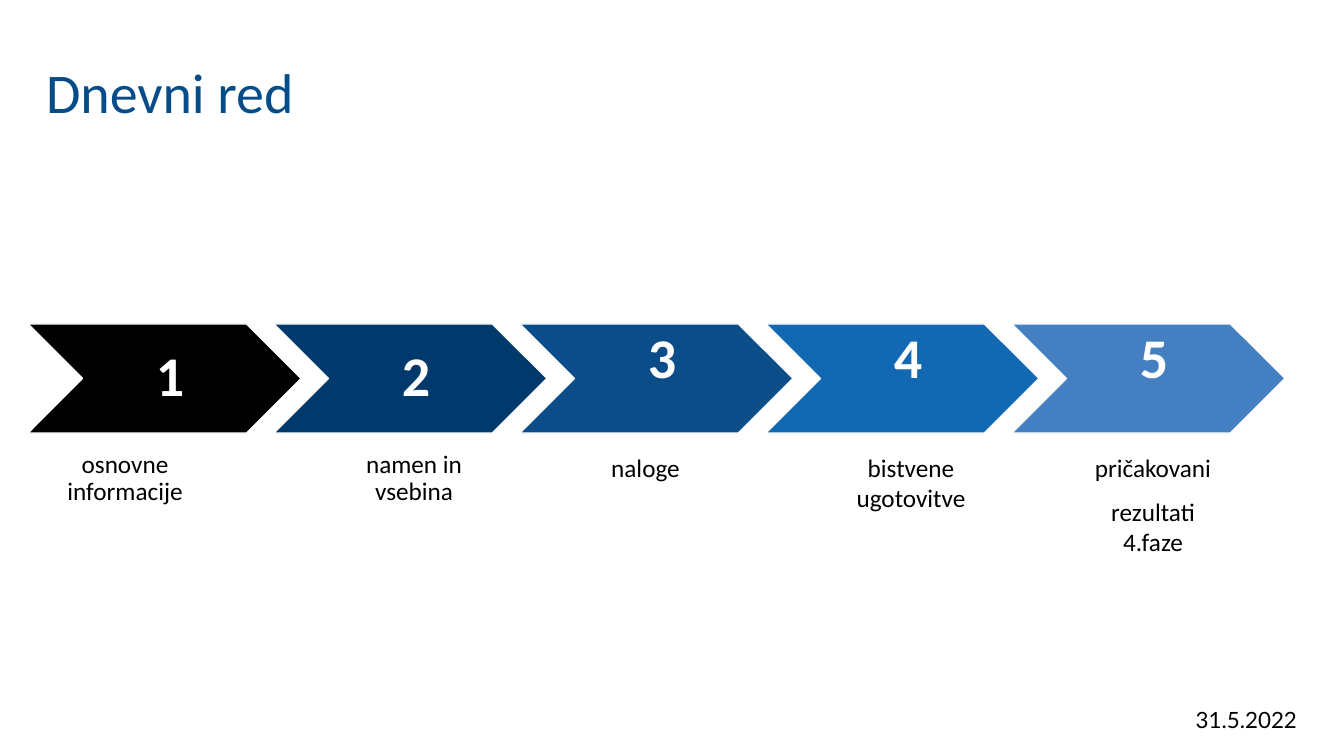
from pptx import Presentation, util as u
from pptx.dml.color import RGBColor
from pptx.enum import shapes, text

PX = 914400 / 100.8  # EMU in one px

BLACK = RGBColor(0x00, 0x00, 0x00)
WHITE = RGBColor(0xFF, 0xFF, 0xFF)
TITLE_BLUE = RGBColor(0x06, 0x4C, 0x88)
NAVY = RGBColor(0x00, 0x3A, 0x6C)
DARK_BLUE = RGBColor(0x0B, 0x4D, 0x88)
BLUE = RGBColor(0x12, 0x68, 0xB3)
LIGHT_BLUE = RGBColor(0x44, 0x7F, 0xC1)

TOP, MIDDLE = text.MSO_ANCHOR.TOP, text.MSO_ANCHOR.MIDDLE
LEFT, CENTER, RIGHT = text.PP_ALIGN.LEFT, text.PP_ALIGN.CENTER, text.PP_ALIGN.RIGHT

CHEVRON_LEFT, CHEVRON_TOP, CHEVRON_PITCH = 28, 324, 246
CHEVRON_WIDTH, CHEVRON_HEIGHT = 273, 109
LABEL_TOP, LABEL_HEIGHT = 447, 249

# Colour, number anchor, label paragraphs, label left, label width, line spacing
STEPS = [
    (BLACK, MIDDLE, ["osnovne informacije"], 48, 154, 0.9),
    (NAVY, MIDDLE, ["namen in vsebina"], 337, 154, 0.9),
    (DARK_BLUE, TOP, ["naloge"], 556, 179, 1.0),
    (BLUE, TOP, ["bistvene ugotovitve"], 834, 154, 1.0),
    (LIGHT_BLUE, TOP, ["pričakovani", "rezultati 4.faze"], 1076, 154, 1.0),
]


def px(value):
    return u.Emu(round(value * PX))


def write(shape, paragraphs, size, color, font="Calibri", bold=False, align=CENTER,
          anchor=TOP, line_spacing=1.0, gap=0):
    """Fill a shape with formatted paragraphs; gap is the space between them."""
    frame = shape.text_frame
    frame.word_wrap = True
    frame.auto_size = text.MSO_AUTO_SIZE.NONE
    frame.vertical_anchor = anchor
    for index, content in enumerate(paragraphs):
        paragraph = frame.add_paragraph() if index else frame.paragraphs[0]
        paragraph.text = content
        paragraph.alignment = align
        paragraph.line_spacing = line_spacing
        paragraph.space_before = u.Pt(gap if index else 0)
        paragraph.font.name = font
        paragraph.font.size = u.Pt(size)
        paragraph.font.bold = bold
        paragraph.font.color.rgb = color


def add_title(slide, content):
    title = slide.shapes.title
    title.left, title.top, title.width, title.height = map(px, (36, 60, 1032, 138))
    write(title, [content], 40, TITLE_BLUE, align=LEFT, line_spacing=0.9)


def add_text(slide, box, paragraphs, size, **style):
    shape = slide.shapes.add_textbox(*map(px, box))
    write(shape, paragraphs, size, BLACK, **style)


def add_chevron(slide, index, color, anchor):
    left = CHEVRON_LEFT + index * CHEVRON_PITCH
    box = (left, CHEVRON_TOP, CHEVRON_WIDTH, CHEVRON_HEIGHT)
    chevron = slide.shapes.add_shape(shapes.MSO_SHAPE.CHEVRON, *map(px, box))
    chevron.shadow.inherit = False
    chevron.fill.solid()
    chevron.fill.fore_color.rgb = color
    chevron.line.color.rgb = WHITE
    chevron.line.width = u.Pt(1)
    frame = chevron.text_frame
    frame.margin_left = px(17)
    frame.margin_right = frame.margin_top = frame.margin_bottom = px(6)
    write(chevron, [str(index + 1)], 40, WHITE, bold=True, anchor=anchor,
          line_spacing=0.9)


def main():
    presentation = Presentation()
    presentation.slide_width, presentation.slide_height = px(1344), px(756)
    slide = presentation.slides.add_slide(presentation.slide_layouts[5])

    add_title(slide, "Dnevni red")

    # Numbered steps with their labels
    for index, (color, anchor, label, left, width, spacing) in enumerate(STEPS):
        add_chevron(slide, index, color, anchor)
        add_text(slide, (left, LABEL_TOP, width, LABEL_HEIGHT), label, 18,
                 line_spacing=spacing, gap=10)

    # Date
    add_text(slide, (1005, 701, 302, 40), ["31.5.2022"], 16, font="Lato", align=RIGHT)

    presentation.save("out.pptx")


if __name__ == "__main__":
    main()
